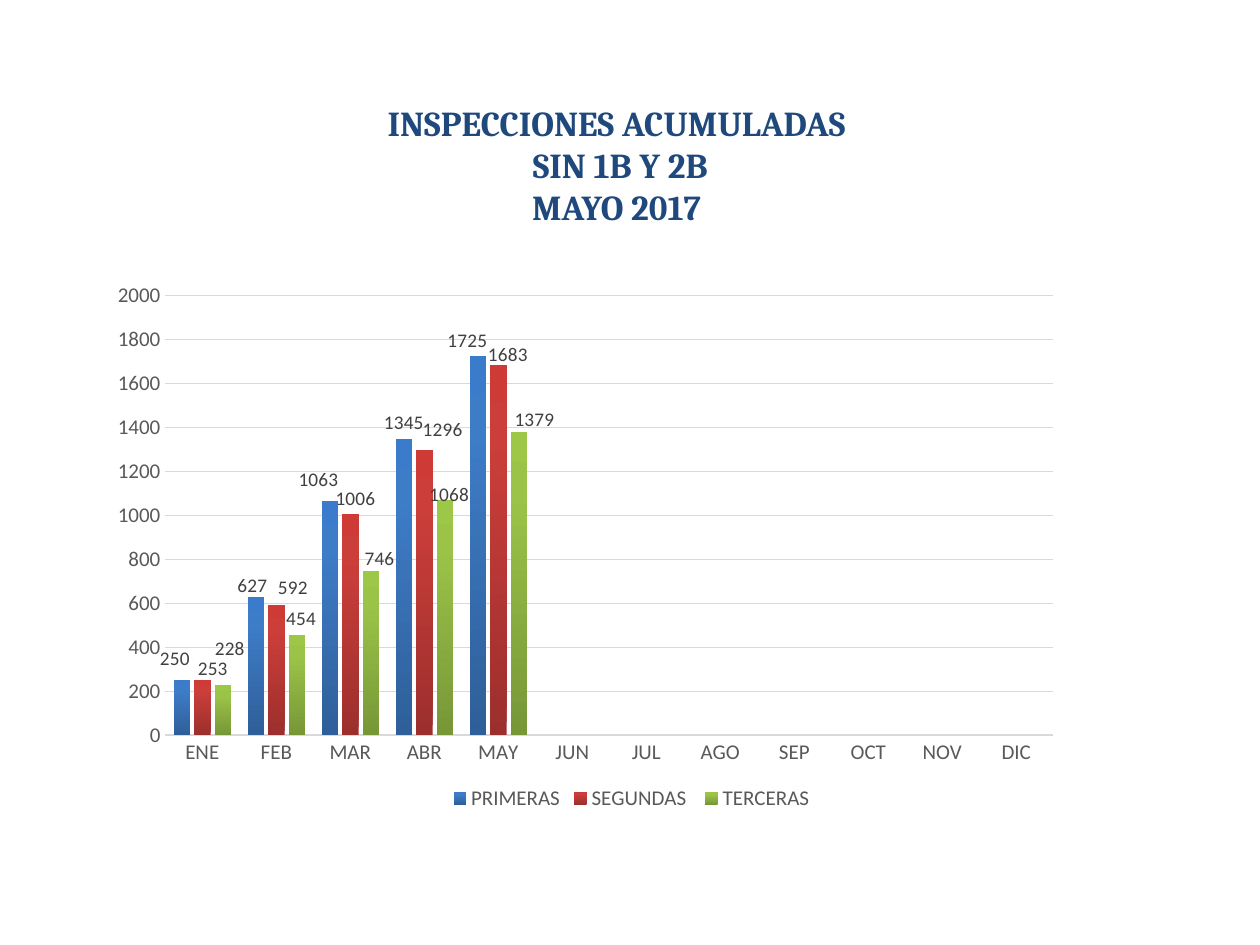
"""Build the slide of accumulated inspections by month."""
from copy import deepcopy

from pptx import Presentation
from pptx.chart.data import CategoryChartData
from pptx.dml.color import RGBColor
from pptx.enum.chart import (XL_CHART_TYPE, XL_LABEL_POSITION, XL_LEGEND_POSITION,
                             XL_TICK_MARK)
from pptx.enum.text import MSO_AUTO_SIZE, PP_ALIGN
from pptx.oxml import parse_xml
from pptx.oxml.ns import nsdecls, qn
from pptx.util import Cm, Pt

COLUMNS = XL_CHART_TYPE.COLUMN_CLUSTERED
OUTSIDE = XL_LABEL_POSITION.OUTSIDE_END
BOTTOM = XL_LEGEND_POSITION.BOTTOM
NO_TICK = XL_TICK_MARK.NONE
CENTER = PP_ALIGN.CENTER
FIT_SHAPE = MSO_AUTO_SIZE.SHAPE_TO_FIT_TEXT

BLACK = RGBColor(0x00, 0x00, 0x00)
NAVY = RGBColor(0x1F, 0x49, 0x7D)
GRAY = RGBColor(0x59, 0x59, 0x59)
DARK_GRAY = RGBColor(0x40, 0x40, 0x40)
LIGHT_GRAY = RGBColor(0xD9, 0xD9, 0xD9)
BLUES = (RGBColor(0x2F, 0x5F, 0x99), RGBColor(0x3D, 0x7C, 0xC7), RGBColor(0x3A, 0x7C, 0xCB))
REDS = (RGBColor(0x9C, 0x2F, 0x2D), RGBColor(0xCB, 0x3E, 0x3A), RGBColor(0xCE, 0x3B, 0x37))
GREENS = (RGBColor(0x77, 0x97, 0x37), RGBColor(0x9B, 0xC3, 0x48), RGBColor(0x9D, 0xC7, 0x46))
GRADIENT_STOPS = (0, 0.8, 1)

MONTHS = ("ENE", "FEB", "MAR", "ABR", "MAY", "JUN",
          "JUL", "AGO", "SEP", "OCT", "NOV", "DIC")
INSPECTIONS = (
    ("PRIMERAS", (250, 627, 1063, 1345, 1725), BLUES,
     {0: (-4, -2.5), 1: (-2, 3), 2: (-6.5, -2.5), 4: (-6, 1)}),
    ("SEGUNDAS ", (253, 592, 1006, 1296, 1683), REDS,
     {0: (6, 3.5), 1: (9.5, 0), 2: (3, 1), 3: (10.5, -2), 4: (5.5, 4)}),
    ("TERCERAS", (228, 454, 746, 1068, 1379), GREENS,
     {0: (4, -11), 1: (2.5, 0), 2: (5, 2.5), 3: (2.5, 6.5), 4: (9, 3)}),
)


def manual_layout(**settings):
    items = "".join(f'<c:{name} val="{value}"/>' for name, value in settings.items())
    return parse_xml(f'<c:layout {nsdecls("c")}><c:manualLayout>{items}'
                     '</c:manualLayout></c:layout>')


def set_font(font, name, size, color, bold=False):
    font.name, font.size, font.bold = name, Pt(size), bold
    font.color.rgb = color


class InspectionSlide:
    title_font = "Cambria"
    chart_font = "Calibri"

    def __init__(self, prs):
        self.s = prs.slides.add_slide(prs.slide_layouts[6])

    def title(self, text, x, y, w, h):
        tf = self.s.shapes.add_textbox(Cm(x), Cm(y), Cm(w), Cm(h)).text_frame
        tf.word_wrap = True
        tf.auto_size = FIT_SHAPE
        tf.text = text
        for p in tf.paragraphs:
            p.alignment = CENTER
            for r in p.runs:
                set_font(r.font, self.title_font, 20, NAVY, True)

    def chart(self, months, inspections, x, y, w, h):
        data = CategoryChartData()
        data.categories = months
        for name, values, _, _ in inspections:
            data.add_series(name, values + (None,) * (len(months) - len(values)))
        chart = self.s.shapes.add_chart(COLUMNS, Cm(x), Cm(y), Cm(w), Cm(h), data).chart
        set_font(chart.font, self.chart_font, 10, BLACK)
        chart.has_title = False
        chart.has_legend = True
        chart.legend.position = BOTTOM
        chart.legend.include_in_layout = False
        set_font(chart.legend.font, self.chart_font, 12, GRAY)
        self.axes(chart)
        plot = chart.plots[0]
        plot.gap_width, plot.overlap = 100, -24
        plot.vary_by_categories = False
        for series, (_, _, colors, offsets) in zip(plot.series, inspections):
            self.gradient(series, colors)
            self.labels(series, offsets, Cm(w), Cm(h))
        area = chart.element.find(".//" + qn("c:plotArea"))
        for layout in area.findall(qn("c:layout")):
            area.remove(layout)
        area.insert(0, manual_layout(layoutTarget="inner", xMode="edge", yMode="edge",
                                     x=0.089, y=0.039, w=0.783, h=0.812))

    def axes(self, chart):
        for axis in (chart.category_axis, chart.value_axis):
            axis.major_tick_mark = axis.minor_tick_mark = NO_TICK
            set_font(axis.tick_labels.font, self.chart_font, 12, GRAY)
        chart.value_axis.format.line.fill.background()
        chart.value_axis.has_major_gridlines = True
        grid = chart.value_axis.major_gridlines.format.line
        for line, width in ((chart.category_axis.format.line, 1), (grid, 0.75)):
            line.color.rgb = LIGHT_GRAY
            line.width = Pt(width)

    def gradient(self, series, colors):
        fill = series.format.fill
        fill.gradient()
        fill.gradient_angle = 90
        stops = series._element.find(".//" + qn("a:gsLst"))
        stops.append(deepcopy(stops[-1]))
        for stop, position, color in zip(fill.gradient_stops, GRADIENT_STOPS, colors):
            stop.position = position
            stop.color.rgb = color

    def labels(self, series, offsets, width, height):
        labels = series.data_labels
        labels.show_value = True
        labels.position = OUTSIDE
        set_font(labels.font, self.chart_font, 11, DARK_GRAY)
        for leader in series._element.iter(qn("c:showLeaderLines")):
            leader.set("val", "0")
        for index in offsets:
            label = series.points[index].data_label
            set_font(label.font, self.chart_font, 11, DARK_GRAY)
            label.position = OUTSIDE
        for label, (dx, dy) in zip(series._element.iter(qn("c:dLbl")), offsets.values()):
            label.insert(1, manual_layout(x=Pt(dx) / width, y=Pt(dy) / height))


def main():
    prs = Presentation()
    prs.slide_width, prs.slide_height = Cm(25.4), Cm(19.05)
    slide = InspectionSlide(prs)
    slide.title("INSPECCIONES ACUMULADAS\n SIN 1B Y 2B\nMAYO 2017", 4.29, 1.93, 16.28, 2.82)
    slide.chart(MONTHS, INSPECTIONS, 1.3, 5.53, 22.86, 10.92)
    prs.save("out.pptx")


if __name__ == "__main__":
    main()
